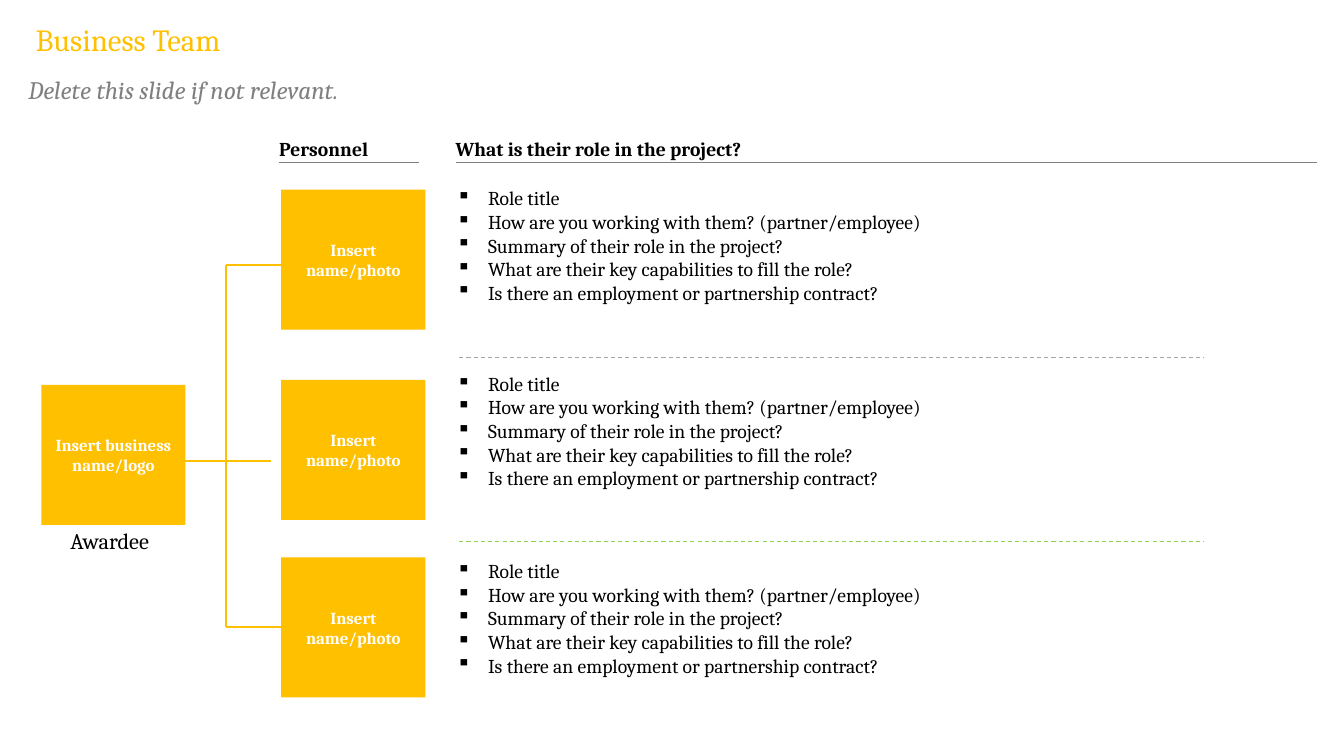
from pptx import Presentation
from pptx.dml.color import RGBColor
from pptx.enum.dml import MSO_LINE
from pptx.enum.shapes import MSO_CONNECTOR, MSO_SHAPE
from pptx.enum.text import MSO_ANCHOR as ANCHOR, PP_ALIGN as ALIGN
from pptx.oxml.ns import qn
from pptx.util import Pt
from lxml.etree import SubElement

GOLD = RGBColor(0xFF, 0xC0, 0x00)
GREEN = RGBColor(0x92, 0xD0, 0x50)
GRAY = RGBColor(0x80, 0x80, 0x80)
SILVER = RGBColor(0xA6, 0xA6, 0xA6)
BLACK = RGBColor(0, 0, 0)
WHITE = RGBColor(0xFF, 0xFF, 0xFF)

QUESTIONS = [
    "Role title",
    "How are you working with them? (partner/employee)",
    "Summary of their role in the project?",
    "What are their key capabilities to fill the role?",
    "Is there an employment or partnership contract?",
]


class TeamSlide:
    font = "Cambria"
    box_w, box_h = 103, 100
    indent = 22.5

    def __init__(self, slide):
        self.shapes = slide.shapes

    def fill_text(self, sp, lines, margins=(7.2, 3.6, 7.2, 3.6), anchor=ANCHOR.TOP,
                  align=ALIGN.LEFT, color=BLACK, **fmt):
        tf = sp.text_frame
        tf.word_wrap = True
        tf.vertical_anchor = anchor
        for side, margin in zip(("left", "top", "right", "bottom"), margins):
            setattr(tf, f"margin_{side}", Pt(margin))
        for i, line in enumerate(lines):
            p = tf.paragraphs[0] if i == 0 else tf.add_paragraph()
            p.alignment = align
            r = p.add_run()
            r.text = line
            r.font.name = self.font
            r.font.color.rgb = color
            for name, value in fmt.items():
                setattr(r.font, name, value)
        return tf

    def text(self, x, y, w, h, lines, **fmt):
        sp = self.shapes.add_textbox(Pt(x), Pt(y), Pt(w), Pt(h))
        return self.fill_text(sp, lines, **fmt)

    def bullets(self, x, y, w, h, lines):
        tf = self.text(x, y, w, h, lines, size=Pt(14))
        for p in tf.paragraphs:
            pPr = p._p.get_or_add_pPr()
            pPr.set("marL", str(Pt(self.indent)))
            pPr.set("indent", str(-Pt(self.indent)))
            SubElement(pPr, qn("a:buChar")).set("char", "▪")

    def box(self, x, y, label):
        sp = self.shapes.add_shape(MSO_SHAPE.RECTANGLE, Pt(x), Pt(y),
                                   Pt(self.box_w), Pt(self.box_h))
        sp.shadow.inherit = False
        sp.fill.solid()
        sp.fill.fore_color.rgb = GOLD
        sp.line.fill.background()
        self.fill_text(sp, [label], anchor=ANCHOR.MIDDLE, align=ALIGN.CENTER,
                       color=WHITE, size=Pt(12), bold=True)

    def line(self, x1, y1, x2, y2, color=GOLD, width=1.5, dash=None):
        s = self.shapes.add_connector(MSO_CONNECTOR.STRAIGHT, Pt(x1), Pt(y1), Pt(x2), Pt(y2))
        s.line.color.rgb = color
        s.line.width = Pt(width)
        if dash:
            s.line.dash_style = dash
        SubElement(s._element.spPr, qn("a:effectLst"))

    def header(self, x, w, label):
        self.text(x, 97.2, w, 18.7, [label], margins=(0, 0, 0, 1.44),
                  anchor=ANCHOR.BOTTOM, size=Pt(14), bold=True)
        self.line(x, 116, x + w, 116, GRAY, 0.75)


def main():
    prs = Presentation()
    prs.slide_width, prs.slide_height = Pt(960), Pt(540)
    s = TeamSlide(prs.slides.add_slide(prs.slide_layouts[6]))

    # Title and instruction
    flush = (0, 0, 0, 0)
    s.text(25.5, 15.1, 786, 26.6, ["Business Team"], margins=flush, color=GOLD, size=Pt(22))
    tf = s.text(20.2, 55.4, 741, 21.6, ["Delete this slide if not relevant."],
                margins=flush, color=GRAY, size=Pt(18), italic=True)
    tf.paragraphs[0].line_spacing = 0.9

    # Tree connectors
    trunk, top, bottom = 161.3, 189.4, 447.8
    s.line(trunk, top, trunk, bottom)
    for y in (top, bottom):
        s.line(trunk, y, 213, y)
    s.line(110, 329, 193.7, 329)

    # Column headers
    s.header(199.4, 99.6, "Personnel")
    s.header(325.4, 615, "What is their role in the project?")

    # Awardee business
    s.box(29.5, 275, "Insert business name/logo")
    s.text(43.2, 373, 83.5, 26.6, ["Awardee"], size=Pt(16))

    # Team members and their roles
    for box_y, role_y in ((135.4, 129.6), (271.4, 262.1), (398.2, 396)):
        s.box(200.9, box_y, "Insert name/photo")
        s.bullets(319, role_y, 614, 125, QUESTIONS)

    # Dividers between members
    for y, color in ((255.6, SILVER), (386.6, GREEN)):
        s.line(328, y, 859.7, y, color, 0.75, MSO_LINE.DASH)

    prs.save("out.pptx")


if __name__ == "__main__":
    main()
